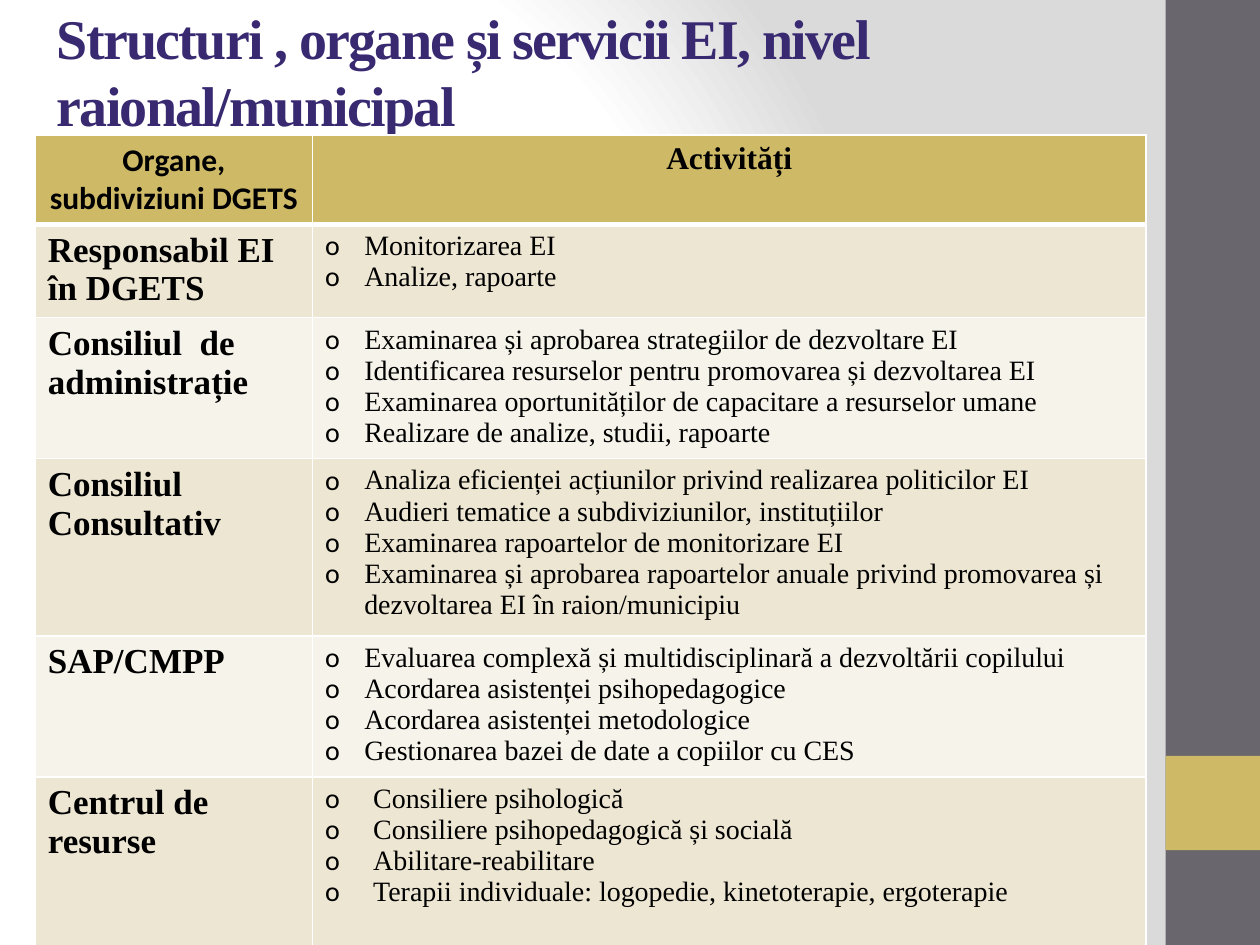
from lxml import etree
from pptx import Presentation, util as u
from pptx.dml.color import RGBColor
from pptx.enum import shapes, text
from pptx.oxml import parse_xml
from pptx.oxml.ns import nsdecls, qn

TITLE = "Structuri , organe și servicii EI, nivel raional/municipal"
HEADERS = [("Organe, subdiviziuni DGETS", "Calibri"), ("Activități", "Times New Roman")]
BODIES = [
    ("Responsabil EI în DGETS", 1.88, 0.79, [
        "Monitorizarea EI",
        "Analize, rapoarte"]),
    ("Consiliul  de administrație", 2.84, 0.79, [
        "Examinarea și aprobarea strategiilor de dezvoltare EI",
        "Identificarea resurselor pentru promovarea și dezvoltarea EI",
        "Examinarea oportunităților de capacitare a resurselor umane",
        "Realizare de analize, studii, rapoarte"]),
    ("Consiliul Consultativ", 3.58, 0.79, [
        "Analiza eficienței acțiunilor privind realizarea politicilor EI",
        "Audieri tematice a subdiviziunilor, instituțiilor",
        "Examinarea rapoartelor de monitorizare EI",
        "Examinarea și aprobarea rapoartelor anuale privind promovarea și "
        "dezvoltarea EI în raion/municipiu"]),
    ("SAP/CMPP", 2.84, 0.79, [
        "Evaluarea complexă și multidisciplinară a dezvoltării copilului",
        "Acordarea asistenței psihopedagogice",
        "Acordarea asistenței metodologice",
        "Gestionarea bazei de date a copiilor cu CES"]),
    ("Centrul de resurse", 3.43, 0.97, [
        "Consiliere psihologică",
        "Consiliere psihopedagogică și socială",
        "Abilitare-reabilitare",
        "Terapii individuale: logopedie, kinetoterapie, ergoterapie"]),
]
HEADER_HEIGHT = 1.75
COLUMNS = [5.59, 16.8]
SIDEBAR = [(0, 19.05, "gray"), (15.24, 1.9, "gold")]
THEME = {
    "serif": "Times New Roman", "bullet": "Calibri",
    "title": 32, "header": 18, "body": 20, "item": 16,
    "purple": "382971", "black": "000000", "white": "FFFFFF",
    "gray": "69676D", "gold": "CEB966", "bands": ["EDE6D3", "F6F3EA"],
    "edge": "DADADA",
}


def color(value):
    return RGBColor.from_string(value)


def style(paragraph, size, bold, font=THEME["serif"], ink=THEME["black"]):
    for run in paragraph.runs:
        run.font.name, run.font.size, run.font.bold = font, u.Pt(size), bold
        run.font.color.rgb = color(ink)


def add_bullet(paragraph, indent):
    props = paragraph._p.get_or_add_pPr()
    props.set("marL", str(u.Cm(indent)))
    props.set("indent", str(-u.Cm(indent)))
    etree.SubElement(props, qn("a:buFont")).set("typeface", THEME["bullet"])
    etree.SubElement(props, qn("a:buChar")).set("char", "o")


def paint(cell, fill, bottom=1):
    props = cell._tc.get_or_add_tcPr()
    for side, width in (("L", 1), ("R", 1), ("T", 1), ("B", bottom)):
        border = etree.SubElement(props, qn(f"a:ln{side}"), w=str(u.Pt(width)))
        solid = etree.SubElement(border, qn("a:solidFill"))
        etree.SubElement(solid, qn("a:srgbClr"), val=THEME["white"])
    cell.fill.solid()
    cell.fill.fore_color.rgb = color(fill)


def set_background(slide):
    stops = "".join(
        f'<a:gs pos="{pos}"><a:srgbClr val="{THEME[name]}"/></a:gs>'
        for pos, name in ((0, "white"), (75000, "white"), (100000, "edge")))
    slide._element.cSld.insert(0, parse_xml(
        f'<p:bg {nsdecls("p", "a")}><p:bgPr><a:gradFill><a:gsLst>{stops}</a:gsLst>'
        '<a:path path="circle"><a:fillToRect l="20000" t="50000" r="100000" b="50000"/>'
        '</a:path></a:gradFill><a:effectLst/></p:bgPr></p:bg>'))


def add_sidebar(slide):
    for top, height, fill in SIDEBAR:
        bar = slide.shapes.add_shape(shapes.MSO_SHAPE.RECTANGLE, u.Cm(23.5), u.Cm(top),
                                     u.Cm(1.9), u.Cm(height))
        bar.shadow.inherit = False
        bar.fill.solid()
        bar.fill.fore_color.rgb = color(THEME[fill])
        bar.line.fill.background()


def set_title(slide):
    title = slide.shapes.title
    title.left, title.top, title.width, title.height = map(u.Cm, (0.89, 0.53, 21.54, 1.8))
    frame = title.text_frame
    frame.text = TITLE
    frame.word_wrap = True
    frame.auto_size = text.MSO_AUTO_SIZE.NONE
    frame.vertical_anchor = text.MSO_ANCHOR.MIDDLE
    heading = frame.paragraphs[0]
    heading.alignment = text.PP_ALIGN.LEFT
    style(heading, THEME["title"], True, ink=THEME["purple"])
    heading.runs[0].font._element.set("spc", "-100")


def add_activities(slide):
    heights = [HEADER_HEIGHT] + [height for _, height, _, _ in BODIES]
    grid = slide.shapes.add_table(len(heights), len(COLUMNS), u.Cm(0.71), u.Cm(2.72),
                                  u.Cm(sum(COLUMNS)), u.Cm(sum(heights))).table
    for column, width in zip(grid.columns, COLUMNS):
        column.width = u.Cm(width)
    for row, height in zip(grid.rows, heights):
        row.height = u.Cm(height)

    for index, (label, font) in enumerate(HEADERS):
        header = grid.cell(0, index)
        header.text_frame.text = label
        header.text_frame.paragraphs[0].alignment = text.PP_ALIGN.CENTER
        style(header.text_frame.paragraphs[0], THEME["header"], True, font)
        paint(header, THEME["gold"], bottom=3)

    for index, (body, _, indent, activities) in enumerate(BODIES):
        name, duties = grid.cell(index + 1, 0), grid.cell(index + 1, 1)
        name.text_frame.text = body
        style(name.text_frame.paragraphs[0], THEME["body"], True)
        duties.text_frame.text = "\n".join(activities)
        for duty in duties.text_frame.paragraphs:
            add_bullet(duty, indent)
            style(duty, THEME["item"], False)
        for cell in (name, duties):
            paint(cell, THEME["bands"][index % 2])


def main():
    deck = Presentation()
    deck.slide_width, deck.slide_height = u.Cm(25.4), u.Cm(19.05)
    slide = deck.slides.add_slide(deck.slide_layouts[5])
    set_background(slide)
    add_sidebar(slide)
    set_title(slide)
    add_activities(slide)
    deck.save("out.pptx")


if __name__ == "__main__":
    main()
